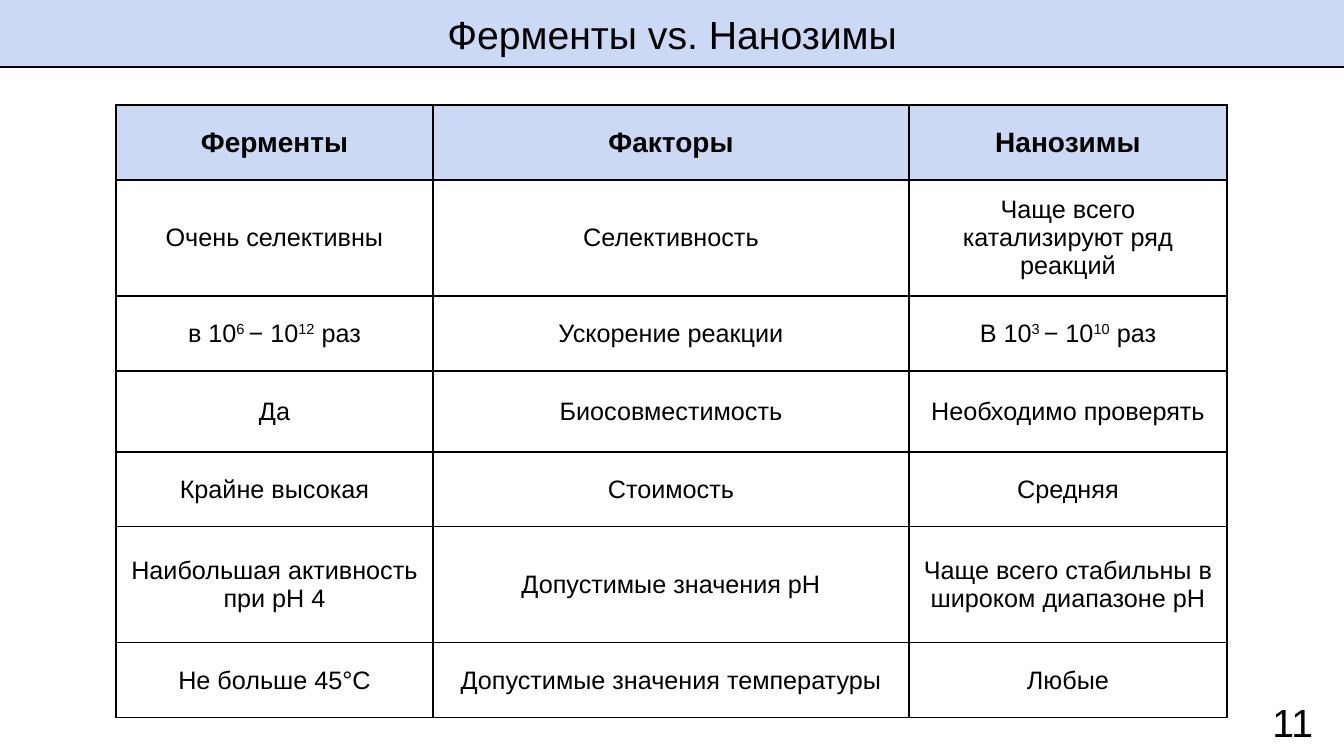
from lxml import etree
from pptx import Presentation
from pptx.dml.color import RGBColor
from pptx.enum.shapes import MSO_CONNECTOR
from pptx.enum.text import MSO_ANCHOR, MSO_AUTO_SIZE, PP_ALIGN
from pptx.oxml import parse_xml
from pptx.oxml.ns import nsdecls, qn
from pptx.util import Pt

PX = 12192000 / 1344
BLUE, WHITE, BLACK = "CCD9F5", "FFFFFF", "000000"


def px(length):
    return round(length * PX)


def style(paragraph, size, align, bold=False):
    paragraph.alignment = align
    paragraph.font.name = "Arial"
    paragraph.font.size = Pt(size)
    paragraph.font.bold = bold
    paragraph.font.color.rgb = RGBColor.from_string(BLACK)


presentation = Presentation()
presentation.slide_width, presentation.slide_height = px(1344), px(756)
slide = presentation.slides.add_slide(presentation.slide_layouts[5])

title = slide.shapes.title
title.left, title.top, title.width, title.height = px(0), px(0), px(1344), px(67)
title.fill.solid()
title.fill.fore_color.rgb = RGBColor.from_string(BLUE)
frame = title.text_frame
frame.text = "Ферменты vs. Нанозимы"
frame.word_wrap = True
frame.auto_size = MSO_AUTO_SIZE.NONE
frame.vertical_anchor = MSO_ANCHOR.TOP
frame.margin_left = frame.margin_right = frame.margin_top = frame.margin_bottom = px(10)
style(frame.paragraphs[0], 28, PP_ALIGN.CENTER)

rule = slide.shapes.add_connector(MSO_CONNECTOR.STRAIGHT, px(-1), px(67), px(1344), px(67))
rule.line.color.rgb = RGBColor.from_string(BLACK)
rule.line.width = Pt(1.5)
etree.SubElement(rule._element.spPr, qn("a:effectLst"))

rows = [
    (75, "Ферменты", "Факторы", "Нанозимы"),
    (116, "Очень селективны", "Селективность", "Чаще всего катализируют ряд реакций"),
    (75, "в 10^6 ^− 10^12^ раз", "Ускорение реакции", "В 10^3 ^− 10^10^ раз"),
    (81, "Да", "Биосовместимость", "Необходимо проверять"),
    (75, "Крайне высокая", "Стоимость", "Средняя"),
    (116, "Наибольшая активность при pH 4", "Допустимые значения pH",
     "Чаще всего стабильны в широком диапазоне pH"),
    (75, "Не больше 45°С", "Допустимые значения температуры", "Любые"),
]
widths = [317, 476, 318]
heights = [row[0] for row in rows]
table = slide.shapes.add_table(
    len(rows), len(widths), px(116), px(105), px(sum(widths)), px(sum(heights))).table
for column, width in zip(table.columns, widths):
    column.width = px(width)

for row_index, (height, *texts) in enumerate(rows):
    table.rows[row_index].height = px(height)
    header = row_index == 0
    for column_index, text in enumerate(texts):
        cell = table.cell(row_index, column_index)
        cell.vertical_anchor = MSO_ANCHOR.MIDDLE
        paragraph = cell.text_frame.paragraphs[0]
        style(paragraph, 20 if header else 18, PP_ALIGN.CENTER, header)
        for part_index, part in enumerate(text.split("^")):
            run = paragraph.add_run()
            run.text = part
            if part_index % 2:
                run._r.get_or_add_rPr().set("baseline", "30000")
        properties = cell._tc.get_or_add_tcPr()
        for side in ("lnL", "lnR", "lnT", "lnB"):
            properties.append(parse_xml(
                f'<a:{side} {nsdecls("a")} w="{Pt(1)}"><a:solidFill>'
                f'<a:srgbClr val="{BLACK}"/></a:solidFill></a:{side}>'))
        cell.fill.solid()
        cell.fill.fore_color.rgb = RGBColor.from_string(BLUE if header else WHITE)

number = slide.shapes.add_textbox(px(1021), px(702), px(302), px(40)).text_frame
number.text = "11"
number.word_wrap = True
number.vertical_anchor = MSO_ANCHOR.MIDDLE
style(number.paragraphs[0], 28, PP_ALIGN.RIGHT)

presentation.save("out.pptx")
